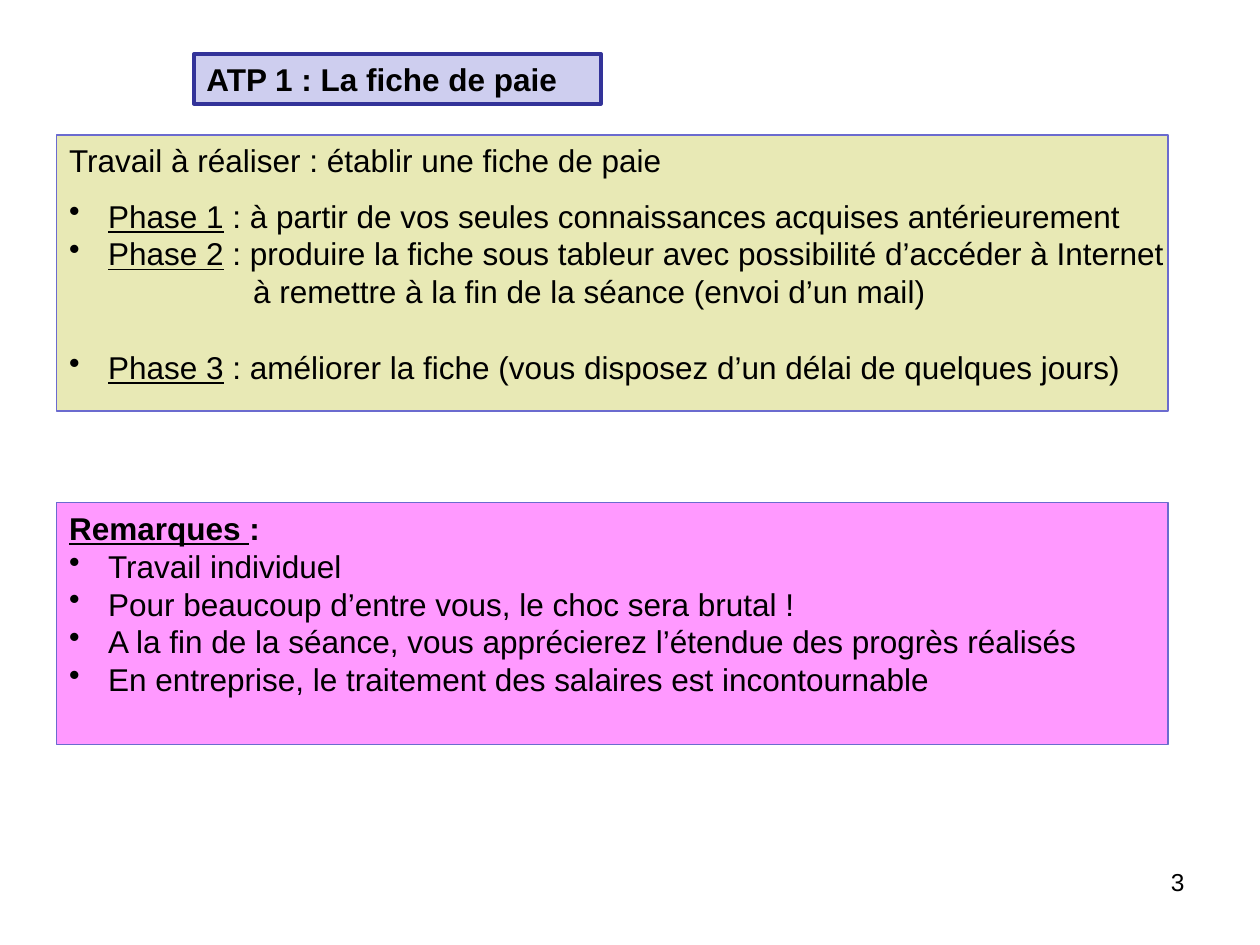
from lxml.etree import SubElement
from pptx import Presentation
from pptx.dml.color import RGBColor
from pptx.enum.shapes import MSO_SHAPE
from pptx.enum.text import MSO_ANCHOR, PP_ALIGN
from pptx.oxml.ns import qn
from pptx.util import Inches, Pt

COLORS = {
    "text": "000000",
    "title_fill": "CECEEF",
    "title_line": "333399",
    "work_fill": "E8E9B5",
    "remarks_fill": "FF99FF",
    "panel_line": "6B6BCF",
}
BULLET_INDENT = Inches(0.31)
DETAIL_INDENT = Inches(1.46)

presentation = Presentation()
presentation.slide_width = Inches(10)
presentation.slide_height = Inches(7.5)
slide = presentation.slides.add_slide(presentation.slide_layouts[6])
width, height = presentation.slide_width, presentation.slide_height


def add_box(left, top, box_width, box_height, fill, line, line_width):
    shape = slide.shapes.add_shape(
        MSO_SHAPE.RECTANGLE,
        int(left * width), int(top * height), int(box_width * width), int(box_height * height),
    )
    shape.shadow.inherit = False
    shape.fill.solid()
    shape.fill.fore_color.rgb = RGBColor.from_string(COLORS[fill])
    shape.line.color.rgb = RGBColor.from_string(COLORS[line])
    shape.line.width = Pt(line_width)
    shape.text_frame.word_wrap = True
    shape.text_frame.vertical_anchor = MSO_ANCHOR.TOP
    return shape.text_frame


def write(paragraph, lead, rest="", size=18, bold=None, indent=0, bullet=False, before=0):
    paragraph.alignment = PP_ALIGN.LEFT
    paragraph.space_before = Pt(before)
    paragraph.font.name = "Arial"
    paragraph.font.size = Pt(size)
    paragraph.font.bold = bold
    paragraph.font.color.rgb = RGBColor.from_string(COLORS["text"])
    properties = paragraph._p.get_or_add_pPr()
    properties.set("marL", str(indent))
    properties.set("indent", str(-indent if bullet else 0))
    if bullet:
        mark = SubElement(properties, qn("a:buChar"), char="•")
        properties.insert_element_before(mark, "a:defRPr")
    for text in filter(None, (lead, rest)):
        run = paragraph.add_run()
        run.text = text
        run.font.name = "Arial"
        run.font.size = Pt(size)
        run.font.color.rgb = RGBColor.from_string(COLORS["text"])
        run.font.bold = bold if text == lead else None
        run.font.underline = bool(rest) and text == lead


title = add_box(0.154, 0.057, 0.323, 0.053, "title_fill", "title_line", 2)
write(title.paragraphs[0], "ATP 1 : La fiche de paie", bold=True)

work = add_box(0.045, 0.143, 0.882, 0.292, "work_fill", "panel_line", 0.75)
work.word_wrap = False
write(work.paragraphs[0], "Travail à réaliser : établir une fiche de paie")
phases = [
    ("Phase 1", " : à partir de vos seules connaissances acquises antérieurement", 10),
    ("Phase 2", " : produire la fiche sous tableur avec possibilité d’accéder à Internet", 0),
    ("à remettre à la fin de la séance (envoi d’un mail)", "", 0),
    ("Phase 3", " : améliorer la fiche (vous disposez d’un délai de quelques jours)", 21.6),
]
for lead, rest, before in phases:
    write(work.add_paragraph(), lead, rest, bullet=bool(rest), before=before,
          indent=BULLET_INDENT if rest else DETAIL_INDENT)

remarks = add_box(0.045, 0.532, 0.882, 0.256, "remarks_fill", "panel_line", 0.75)
write(remarks.paragraphs[0], "Remarques ", ":", bold=True)
for remark in (
    "Travail individuel",
    "Pour beaucoup d’entre vous, le choc sera brutal !",
    "A la fin de la séance, vous apprécierez l’étendue des progrès réalisés",
    "En entreprise, le traitement des salaires est incontournable",
):
    write(remarks.add_paragraph(), remark, indent=BULLET_INDENT, bullet=True)

number_box = slide.shapes.add_textbox(
    int(0.717 * width), int(0.911 * height), int(0.233 * width), int(0.069 * height))
number_box.text_frame.word_wrap = True
number = number_box.text_frame.paragraphs[0]
write(number, "3", size=14)
number.alignment = PP_ALIGN.RIGHT

presentation.save("out.pptx")
